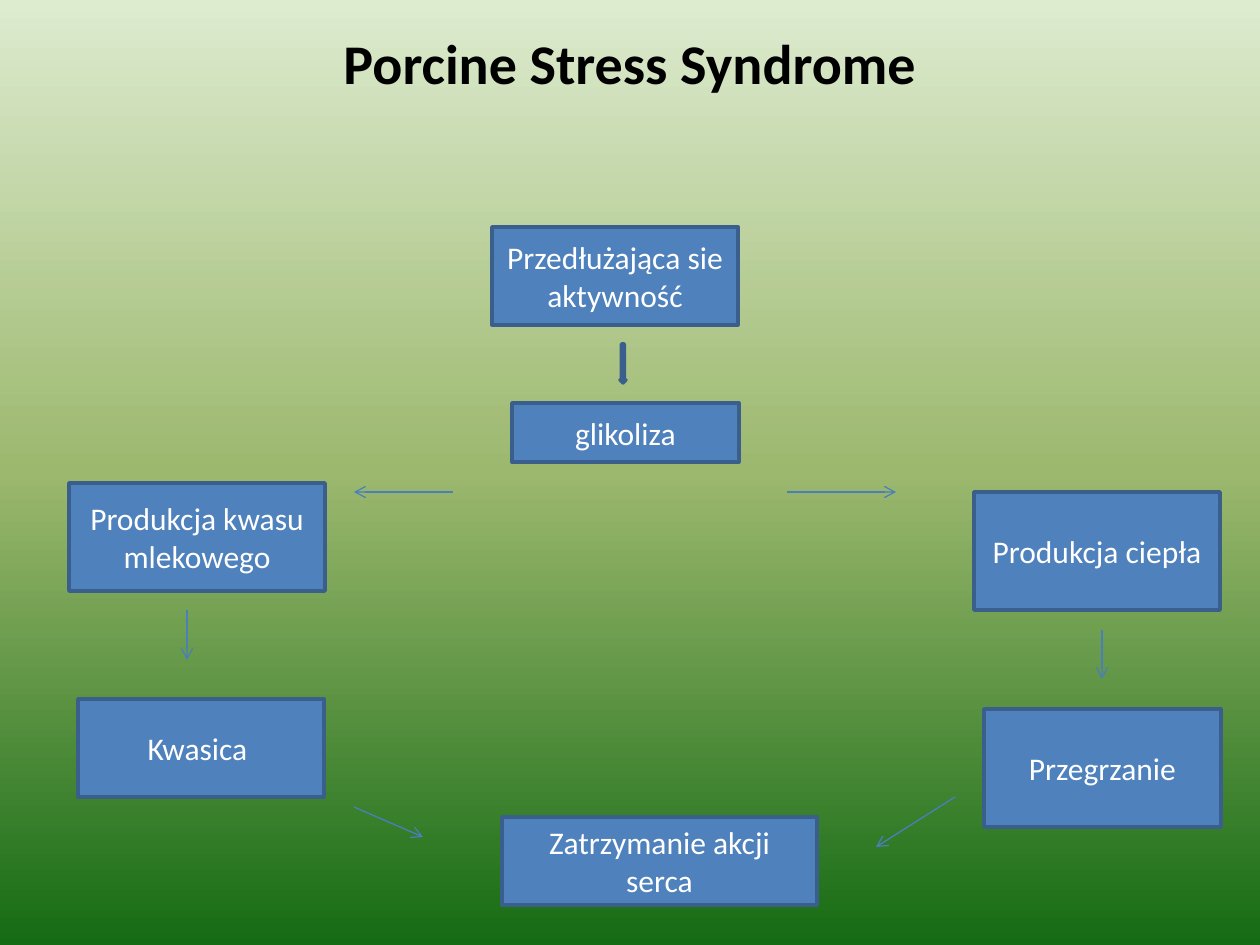
from copy import deepcopy
from dataclasses import dataclass

from pptx import Presentation
from pptx.dml.color import RGBColor
from pptx.enum.shapes import MSO_CONNECTOR, MSO_SHAPE
from pptx.enum.text import MSO_ANCHOR, PP_ALIGN
from pptx.oxml.ns import qn
from pptx.oxml.xmlchemy import OxmlElement
from pptx.util import Emu, Pt

EMU_PER_PX = 914400 / 126


@dataclass(frozen=True)
class Theme:
    font: str = "Calibri"
    title_size: int = 32
    box_size: int = 18
    outline_width: float = 2
    arrow_width: float = 0.75
    title: str = "000000"
    box_text: str = "FFFFFF"
    box_fill: str = "4F81BD"
    box_line: str = "3A5F8C"
    arrow: str = "4B7EBC"
    background: tuple = ((0, "DDEBCF"), (0.5, "9CB86E"), (1, "156B13"))


THEME = Theme()

# Left, top, width, height in px, then one text per paragraph
BOXES = [
    (492, 227, 246, 98, ["Przedłużająca sie", "aktywność"]),
    (512, 403, 227, 59, ["glikoliza"]),
    (69, 483, 256, 108, ["Produkcja kwasu mlekowego"]),
    (974, 492, 246, 118, ["Produkcja ciepła"]),
    (78, 699, 246, 98, ["Kwasica "]),
    (984, 709, 237, 118, ["Przegrzanie"]),
    (502, 817, 315, 88, ["Zatrzymanie akcji serca"]),
]

# Start x, start y, end x, end y in px
ARROWS = [
    (453, 492, 354, 492),
    (787, 492, 896, 492),
    (187, 610, 187, 660),
    (1102, 630, 1102, 679),
    (354, 807, 423, 837),
    (955, 797, 876, 847),
]


def px(*lengths):
    return [Emu(round(length * EMU_PER_PX)) for length in lengths]


def color(value):
    return RGBColor.from_string(value)


def add_run(paragraph, text, size, text_color, bold=False):
    paragraph.alignment = PP_ALIGN.CENTER
    run = paragraph.add_run()
    run.text = text
    run.font.name = THEME.font
    run.font.size = Pt(size)
    run.font.bold = bold
    run.font.color.rgb = color(text_color)


def set_background(slide):
    fill = slide.background.fill
    fill.gradient()
    fill.gradient_angle = 270
    stop_list = slide.element.find(".//" + qn("a:gsLst"))
    stop_list.insert(1, deepcopy(stop_list[0]))
    for stop, (position, value) in zip(fill.gradient_stops, THEME.background):
        stop.position = position
        stop.color.rgb = color(value)


def set_title(slide, text):
    title = slide.shapes.title
    title.left, title.top, title.width, title.height = px(63, 8, 1134, 109)
    title.text_frame.vertical_anchor = MSO_ANCHOR.MIDDLE
    add_run(title.text_frame.paragraphs[0], text, THEME.title_size, THEME.title, True)


def add_filled_shape(slide, kind, *bounds):
    shape = slide.shapes.add_shape(kind, *px(*bounds))
    shape.shadow.inherit = False
    shape.fill.solid()
    shape.fill.fore_color.rgb = color(THEME.box_fill)
    shape.line.color.rgb = color(THEME.box_line)
    shape.line.width = Pt(THEME.outline_width)
    return shape


def add_box(slide, left, top, width, height, texts):
    shape = add_filled_shape(slide, MSO_SHAPE.RECTANGLE, left, top, width, height)
    frame = shape.text_frame
    frame.word_wrap = True
    frame.vertical_anchor = MSO_ANCHOR.MIDDLE
    for index, text in enumerate(texts):
        paragraph = frame.add_paragraph() if index else frame.paragraphs[0]
        add_run(paragraph, text, THEME.box_size, THEME.box_text)


def add_arrow(slide, *ends):
    connector = slide.shapes.add_connector(MSO_CONNECTOR.STRAIGHT, *px(*ends))
    connector.line.color.rgb = color(THEME.arrow)
    connector.line.width = Pt(THEME.arrow_width)
    # Open arrowhead at the end, no shadow
    head = OxmlElement("a:tailEnd")
    head.set("type", "arrow")
    connector.line._get_or_add_ln().append(head)
    connector._element.spPr.append(OxmlElement("a:effectLst"))


def main():
    presentation = Presentation()
    presentation.slide_width, presentation.slide_height = px(1260, 945)
    slide = presentation.slides.add_slide(presentation.slide_layouts[5])

    # Background and heading
    set_background(slide)
    set_title(slide, "Porcine Stress Syndrome")

    # Flow chart
    for box in BOXES:
        add_box(slide, *box)
    add_filled_shape(slide, MSO_SHAPE.DOWN_ARROW, 620, 344, 6, 39)
    for ends in ARROWS:
        add_arrow(slide, *ends)

    presentation.save("out.pptx")


if __name__ == "__main__":
    main()
